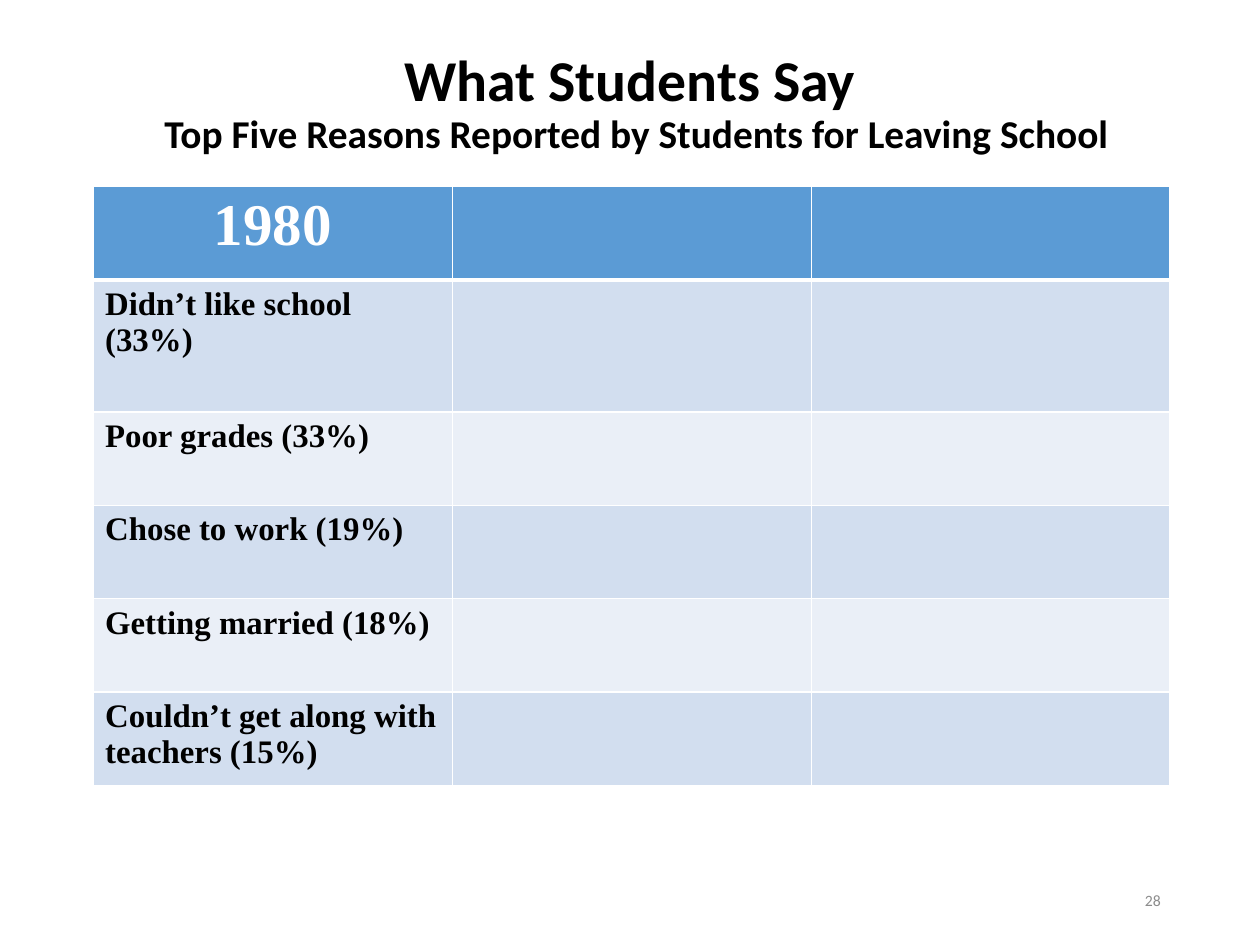
from lxml import etree
from pptx import Presentation
from pptx.dml.color import RGBColor
from pptx.enum.text import MSO_ANCHOR, MSO_AUTO_SIZE, PP_ALIGN
from pptx.oxml.ns import qn
from pptx.util import Emu, Pt

LEFT, MID, RIGHT = PP_ALIGN.LEFT, PP_ALIGN.CENTER, PP_ALIGN.RIGHT
CENTRE = MSO_ANCHOR.MIDDLE
FIXED = MSO_AUTO_SIZE.NONE
SCALE = 9144  # EMU per px, 100 px to the inch

WHITE, BLACK, GREY = "FFFFFF", "000000", "8C8C8C"
HEAD, BANDS = "5B9BD5", ("D2DEEF", "EAEFF7")
SANS, SERIF = "Calibri", "Times New Roman"

COLS = 3
ROWS = [
    ("1980", 79),
    ("Didn’t like school (33%)", 112),
    ("Poor grades (33%)", 79),
    ("Chose to work (19%)", 79),
    ("Getting married (18%)", 79),
    ("Couldn’t get along with teachers (15%)", 79),
]


def px(num):
    return Emu(num * SCALE)


def rgb(code):
    return RGBColor.from_string(code)


def place(shape, box):
    for name, num in zip(("left", "top", "width", "height"), box):
        setattr(shape, name, px(num))


def edge(cell, side, width):
    """Draw one white cell border; side is L, R, T or B."""
    line = etree.SubElement(cell._tc.get_or_add_tcPr(), qn("a:ln" + side),
                            w=str(Pt(width)))
    fill = etree.SubElement(line, qn("a:solidFill"))
    etree.SubElement(fill, qn("a:srgbClr"), val=WHITE)


class Deck:
    def __init__(self, wide, high):
        self.file = Presentation()
        self.file.slide_width, self.file.slide_height = px(wide), px(high)
        self.slide = self.file.slides.add_slide(self.file.slide_layouts[5])

    def words(self, para, text, size, face, color, bold=False):
        run = para.add_run()
        run.text = text
        form = {"size": Pt(size), "name": face, "bold": bold}
        for name, value in form.items():
            setattr(run.font, name, value)
        run.font.color.rgb = rgb(color)

    def frame(self, shape, align):
        """Set up a shape's text frame and return its first paragraph."""
        form = {"word_wrap": True, "auto_size": FIXED,
                "vertical_anchor": CENTRE}
        for name, value in form.items():
            setattr(shape.text_frame, name, value)
        para = shape.text_frame.paragraphs[0]
        para.alignment = align
        return para

    def title(self, box, main, sub):
        shape = self.slide.shapes.title
        place(shape, box)
        para = self.frame(shape, MID)
        para.line_spacing = 0.9
        self.words(para, main, 35.2, SANS, BLACK, True)
        para.add_line_break()
        self.words(para, sub, 24, SANS, BLACK, True)

    def label(self, box, text):
        shape = self.slide.shapes.add_textbox(*map(px, box))
        self.words(self.frame(shape, RIGHT), text, 9.6, SANS, GREY)

    def table(self, left, top, wide, rows):
        """Build a banded table with text in its first column."""
        high = sum(size for _, size in rows)
        grid = self.slide.shapes.add_table(
            len(rows), COLS, px(left), px(top), px(wide * COLS), px(high)).table
        for col in grid.columns:
            col.width = px(wide)
        for i, (text, size) in enumerate(rows):
            grid.rows[i].height = px(size)
            for cell in grid.rows[i].cells:
                widths = {"L": 1, "R": 1, "T": 3 if i == 1 else 1,
                          "B": 3 if i == 0 else 1}
                for side, width in widths.items():
                    edge(cell, side, width)
                cell.fill.solid()
                cell.fill.fore_color.rgb = rgb(BANDS[(i - 1) % 2] if i else HEAD)
            para = grid.cell(i, 0).text_frame.paragraphs[0]
            para.alignment = LEFT if i else MID
            look = (20, SERIF, BLACK) if i else (36, SERIF, WHITE)
            self.words(para, text, *look, True)


def main():
    deck = Deck(1067, 800)
    deck.title((60, 22, 958, 133), "What Students Say ",
               "Top Five Reasons Reported by Students for Leaving School")
    deck.table(79, 158, 304, ROWS)
    deck.label((753, 741, 240, 43), "28")
    deck.file.save("out.pptx")


if __name__ == "__main__":
    main()
